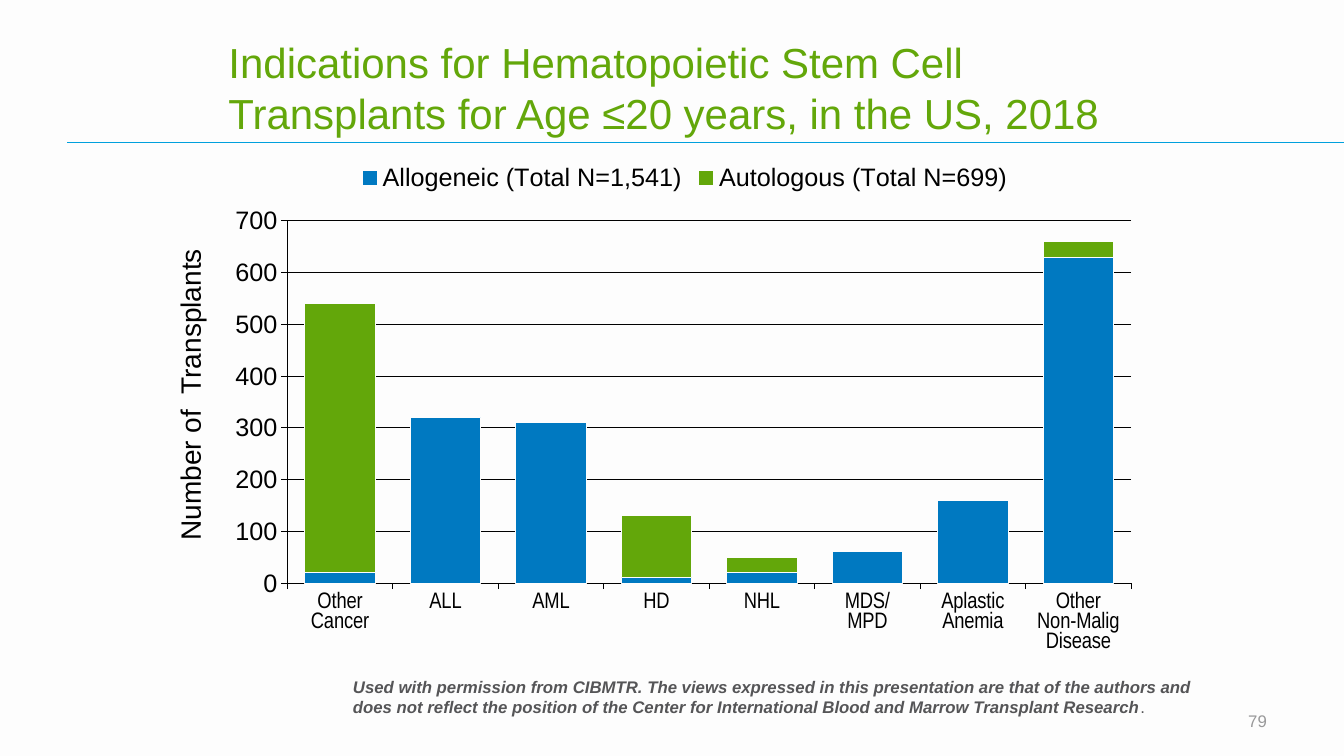
"""Build the slide on stem cell transplant indications for age 20 and under."""
from lxml import etree
from pptx import Presentation
from pptx.chart.data import CategoryChartData
from pptx.dml.color import RGBColor
from pptx.enum.chart import XL_CHART_TYPE, XL_LEGEND_POSITION as LegendPos, XL_TICK_MARK as Tick
from pptx.enum.shapes import MSO_CONNECTOR
from pptx.enum.text import MSO_ANCHOR as Anchor, MSO_AUTO_SIZE as AutoSize, PP_ALIGN as Align
from pptx.oxml import parse_xml
from pptx.oxml.ns import nsdecls, qn
from pptx.util import Pt

COLORS = {
    "background": "FDFDFD", "rule": "00A0DD", "black": "000000", "allogeneic": "0079C1",
    "autologous": "63A70A", "number": "99999A", "credit": "555557",
}
TITLE = "Indications for Hematopoietic Stem Cell Transplants for Age ≤20 years, in the US, 2018"
AXIS_TITLE = "Number of  Transplants"
CREDIT = (
    "Used with permission from CIBMTR. The views expressed in this presentation are that of "
    "the authors and does not reflect the position of the Center for International Blood and "
    "Marrow Transplant Research"
)
PAGE = "79"
INDICATIONS = [
    "Other\nCancer", "ALL", "AML", "HD", "NHL", "MDS/\nMPD", "Aplastic\nAnemia",
    "Other\nNon-Malig\nDisease",
]
TRANSPLANTS = [
    ("Allogeneic (Total N=1,541)", "allogeneic", [20, 320, 310, 10, 20, 60, 160, 630]),
    ("Autologous (Total N=699)", "autologous", [520, 0, 0, 120, 30, 0, 0, 30]),
]
SLIDE = (960, 540)
RULE = (48, 102)
PLOT = {"x": 0.074, "y": 0.136, "w": 0.905, "h": 0.707}
PLACES = {
    "title": (156, 12, 684, 90), "chart": (156, 108, 666, 366), "page": (864, 500.4, 48, 28.8),
    "axis": (120, 168, 39, 228), "credit": (245, 480, 619, 58),
}


def color(name):
    return RGBColor.from_string(COLORS[name])


def place(part):
    return [Pt(length) for length in PLACES[part]]


def style(font, size, tint, face="Arial", strong=False):
    font.name, font.size = face, Pt(size)
    font.bold = font.italic = strong
    font.color.rgb = color(tint)


def outline(line, tint="black"):
    line.color.rgb = color(tint)
    line.width = Pt(0.75)


def add_label(slide, part, runs, align=Align.LEFT, anchor=Anchor.TOP):
    frame = slide.shapes.add_textbox(*place(part)).text_frame
    frame.word_wrap = True
    frame.vertical_anchor = anchor
    paragraph = frame.paragraphs[0]
    paragraph.alignment = align
    for text, size, tint, strong in runs:
        run = paragraph.add_run()
        run.text = text
        style(run.font, size, tint, strong=strong)
    return frame


def add_title(slide):
    title = slide.shapes.title
    title.left, title.top, title.width, title.height = place("title")
    frame = title.text_frame
    frame.auto_size = AutoSize.NONE
    frame.vertical_anchor = Anchor.BOTTOM
    frame.paragraphs[0].alignment = Align.LEFT
    run = frame.paragraphs[0].add_run()
    run.text = TITLE
    style(run.font, 30, "autologous")


def add_rule(slide):
    left, top = RULE
    rule = slide.shapes.add_connector(
        MSO_CONNECTOR.STRAIGHT, Pt(left), Pt(top), Pt(SLIDE[0]), Pt(top))
    outline(rule.line, "rule")
    etree.SubElement(rule._element.spPr, qn("a:effectLst"))


def set_plot_area(chart):
    area = chart._chartSpace.chart.plotArea
    for old in area.findall(qn("c:layout")):
        area.remove(old)
    sizes = "".join(f'<c:{key} val="{share}"/>' for key, share in PLOT.items())
    area.insert(0, parse_xml(
        f'<c:layout {nsdecls("c")}><c:manualLayout><c:layoutTarget val="inner"/>'
        f'<c:xMode val="edge"/><c:yMode val="edge"/>{sizes}</c:manualLayout></c:layout>'))


def add_transplant_chart(slide):
    data = CategoryChartData()
    data.categories = INDICATIONS
    for name, _, counts in TRANSPLANTS:
        data.add_series(name, counts)
    chart = slide.shapes.add_chart(XL_CHART_TYPE.COLUMN_STACKED, *place("chart"), data).chart
    chart.has_title = False
    style(chart.font, 18, "black")
    chart.has_legend = True
    chart.legend.position = LegendPos.TOP
    chart.legend.include_in_layout = False
    style(chart.legend.font, 18, "black")

    bars = chart.plots[0]
    bars.gap_width, bars.overlap = 50, 100
    bars.vary_by_categories = False
    for series, (_, tint, _) in zip(bars.series, TRANSPLANTS):
        series.format.fill.solid()
        series.format.fill.fore_color.rgb = color(tint)
        outline(series.format.line, "background")

    for axis, size, face, number_format in (
        (chart.category_axis, 16, "Arial Narrow", "@"),
        (chart.value_axis, 18, "Arial", "########0"),
    ):
        axis.major_tick_mark, axis.minor_tick_mark = Tick.OUTSIDE, Tick.NONE
        axis.tick_labels.number_format = number_format
        axis.tick_labels.number_format_is_linked = False
        style(axis.tick_labels.font, size, "black", face)
        outline(axis.format.line)
    counts_axis = chart.value_axis
    counts_axis.minimum_scale, counts_axis.maximum_scale = 0, 700
    counts_axis.major_unit = 100
    counts_axis.has_major_gridlines = True
    outline(counts_axis.major_gridlines.format.line)
    set_plot_area(chart)


def main():
    deck = Presentation()
    deck.slide_width, deck.slide_height = (Pt(length) for length in SLIDE)
    slide = deck.slides.add_slide(deck.slide_layouts[5])
    slide.background.fill.solid()
    slide.background.fill.fore_color.rgb = color("background")
    add_rule(slide)
    add_title(slide)
    add_transplant_chart(slide)
    add_label(slide, "page", [(PAGE, 12, "number", False)], Align.RIGHT, Anchor.MIDDLE)
    axis_title = add_label(slide, "axis", [(AXIS_TITLE, 20, "black", False)], Align.CENTER)
    axis_title._txBody.bodyPr.set("vert", "vert270")
    add_label(slide, "credit", [(CREDIT, 12, "credit", True), (".", 12, "credit", False)])
    deck.save("out.pptx")


if __name__ == "__main__":
    main()
